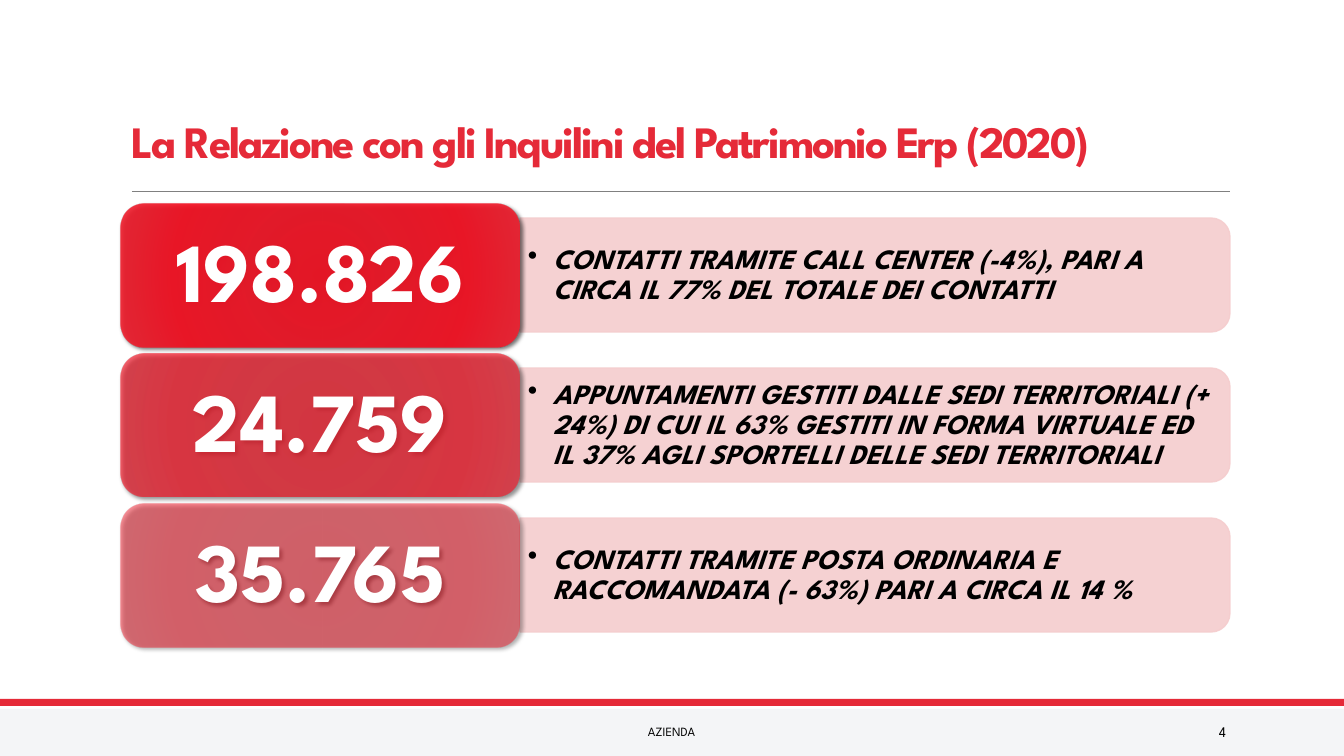
from dataclasses import dataclass
from typing import Any

from pptx import Presentation
from pptx import util as u
from pptx.dml.color import RGBColor
from pptx.enum import shapes, text
from pptx.oxml import parse_xml
from pptx.oxml.ns import nsdecls, qn

EMU_PER_PX = 914400 / 100.8
FONT = "League Spartan"
RED, PINK, GREY, FOOTER = "E52A38", "F5CDCE", "808080", "F4F5F7"
BLACK, WHITE = "000000", "FFFFFF"
CARD_STOPS = [(0, "F00D1E"), (34, "EE1222"), (70, "F60D1F"), (100, "EE2130")]

ROW_TOP, ROW_PITCH = 204, 150
CARD_LEFT, CARD_WIDTH, CARD_HEIGHT = 121, 399, 143
STRIP_WIDTH, STRIP_HEIGHT = 710, 114
NOTE_WIDTH, NOTE_HEIGHT, NOTE_INDENT = 704, 103, 25


@dataclass
class Box:
    left: int
    top: int
    width: int
    height: int


@dataclass
class Label:
    box: Box
    words: str
    size: float
    color: str = BLACK
    align: Any = text.PP_ALIGN.LEFT
    anchor: Any = text.MSO_ANCHOR.MIDDLE
    bold: bool = False
    italic: bool = False
    line_spacing: float = 1.0
    margins: tuple[int, int] = (10, 5)
    spacing: int = 0
    bullet: bool = False


@dataclass
class Row:
    figure: str
    note: str
    opacity: int


ROWS = [
    Row("198.826", "CONTATTI TRAMITE CALL CENTER (-4%), PARI A CIRCA IL 77% "
        "DEL TOTALE DEI CONTATTI", 90),
    Row("24.759", "APPUNTAMENTI GESTITI DALLE SEDI TERRITORIALI (+ 24%) DI CUI IL 63% "
        "GESTITI IN FORMA VIRTUALE ED IL 37% AGLI SPORTELLI DELLE SEDI TERRITORIALI", 70),
    Row("35.765", "CONTATTI TRAMITE POSTA ORDINARIA E RACCOMANDATA (- 63%) "
        "PARI A CIRCA IL 14 %", 50),
]


def px(value: int) -> u.Emu:
    return u.Emu(round(value * EMU_PER_PX))


def rgb(color: str) -> RGBColor:
    return RGBColor.from_string(color)


def place(box: Box) -> tuple:
    return px(box.left), px(box.top), px(box.width), px(box.height)


def apply(target: Any, values: dict[str, Any]) -> None:
    for name, value in values.items():
        setattr(target, name, value)


def set_opacity(fill: Any, percent: int) -> None:
    color = fill._xPr.find(qn("a:solidFill"))[0]
    color.append(parse_xml(f'<a:alpha {nsdecls("a")} val="{percent * 1000}"/>'))


def add_shape(slide: Any, kind: Any, box: Box, color: str) -> Any:
    shape = slide.shapes.add_shape(kind, *place(box))
    shape.shadow.inherit = False
    shape.fill.solid()
    shape.fill.fore_color.rgb = rgb(color)
    shape.line.fill.background()
    return shape


def write(shape: Any, label: Label) -> None:
    side, end = (px(margin) for margin in label.margins)
    frame = shape.text_frame
    apply(frame, {"word_wrap": True, "vertical_anchor": label.anchor,
                  "margin_left": side, "margin_right": side,
                  "margin_top": end, "margin_bottom": end})
    paragraph = frame.paragraphs[0]
    apply(paragraph, {"alignment": label.align, "line_spacing": label.line_spacing})
    if label.bullet:
        properties = paragraph._p.get_or_add_pPr()
        properties.set("marL", str(px(NOTE_INDENT)))
        properties.set("indent", str(-px(NOTE_INDENT)))
        properties.append(parse_xml(f'<a:buChar {nsdecls("a")} char="•"/>'))
    run = paragraph.add_run()
    run.text = label.words
    apply(run.font, {"name": FONT, "size": u.Pt(label.size),
                     "bold": label.bold, "italic": label.italic})
    run.font.color.rgb = rgb(label.color)
    if label.spacing:
        run._r.get_or_add_rPr().set("spc", str(label.spacing))


def add_label(slide: Any, label: Label) -> None:
    write(slide.shapes.add_textbox(*place(label.box)), label)


def add_strip(slide: Any, center_y: int) -> None:
    # Rounded top corners turn to the right-hand side
    center_x = CARD_LEFT + CARD_WIDTH + STRIP_WIDTH // 2
    box = Box(center_x - STRIP_HEIGHT // 2, center_y - STRIP_WIDTH // 2,
              STRIP_HEIGHT, STRIP_WIDTH)
    strip = add_shape(slide, shapes.MSO_SHAPE.ROUND_2_SAME_RECTANGLE, box, PINK)
    strip.rotation = 90
    strip.line.color.rgb = rgb(PINK)
    strip.line.width = u.Pt(1)
    for fill in (strip.fill, strip.line.fill):
        set_opacity(fill, 90)


def add_card(slide: Any, box: Box, row: Row) -> None:
    card = add_shape(slide, shapes.MSO_SHAPE.ROUNDED_RECTANGLE, box, RED)
    properties = card._element.spPr
    # Radial gradient
    stops = "".join(
        f'<a:gs pos="{position * 1000}"><a:srgbClr val="{color}">'
        f'<a:alpha val="{row.opacity * 1000}"/></a:srgbClr></a:gs>'
        for position, color in CARD_STOPS)
    gradient = parse_xml(
        f'<a:gradFill {nsdecls("a")} rotWithShape="1"><a:gsLst>{stops}</a:gsLst>'
        '<a:path path="circle"><a:fillToRect l="100000" t="100000" r="100000" b="100000"/>'
        '</a:path></a:gradFill>')
    properties.replace(properties.find(qn("a:solidFill")), gradient)
    # Soft shadow
    properties.find(qn("a:effectLst")).append(parse_xml(
        f'<a:outerShdw {nsdecls("a")} blurRad="{u.Pt(3)}" dist="{u.Pt(2)}" dir="2700000" '
        f'rotWithShape="0"><a:srgbClr val="{BLACK}"><a:alpha val="60000"/></a:srgbClr>'
        '</a:outerShdw>'))
    write(card, Label(box, row.figure, 60, WHITE, text.PP_ALIGN.CENTER, bold=True,
                      line_spacing=0.9, margins=(32, 19)))


def add_row(slide: Any, index: int, row: Row) -> None:
    card = Box(CARD_LEFT, ROW_TOP + index * ROW_PITCH, CARD_WIDTH, CARD_HEIGHT)
    center_y = card.top + card.height // 2
    add_strip(slide, center_y)
    note = Box(card.left + card.width, center_y - NOTE_HEIGHT // 2, NOTE_WIDTH, NOTE_HEIGHT)
    add_label(slide, Label(note, row.note, 20, bold=True, italic=True, line_spacing=0.9,
                           margins=(8, 4), bullet=True))
    add_card(slide, card, row)


def add_rule(slide: Any, left: int, right: int, y: int) -> None:
    rule = slide.shapes.add_connector(shapes.MSO_CONNECTOR.STRAIGHT,
                                      px(left), px(y), px(right), px(y))
    rule.line.color.rgb = rgb(GREY)
    rule.line.width = u.Pt(0.5)
    rule._element.spPr.append(parse_xml(f'<a:effectLst {nsdecls("a")}/>'))


def main() -> None:
    presentation = Presentation()
    apply(presentation, {"slide_width": px(1344), "slide_height": px(756)})
    slide = presentation.slides.add_slide(presentation.slide_layouts[6])

    # Footer bands and title rule
    add_shape(slide, shapes.MSO_SHAPE.RECTANGLE, Box(0, 709, 1344, 47), FOOTER)
    add_shape(slide, shapes.MSO_SHAPE.RECTANGLE, Box(0, 699, 1344, 7), RED)
    add_rule(slide, 132, 1230, 191)

    # Title, footer text and page number
    add_label(slide, Label(Box(122, 95, 1109, 78),
                           "La Relazione con gli Inquilini del Patrimonio Erp (2020)", 32, RED,
                           anchor=text.MSO_ANCHOR.BOTTOM, bold=True, line_spacing=0.85,
                           spacing=-150))
    add_label(slide, Label(Box(406, 712, 531, 40), "AZIENDA", 9, align=text.PP_ALIGN.CENTER))
    add_label(slide, Label(Box(1092, 712, 144, 40), "4", 10.5, align=text.PP_ALIGN.RIGHT))

    # Contact figures
    for index, row in enumerate(ROWS):
        add_row(slide, index, row)

    presentation.save("out.pptx")


if __name__ == "__main__":
    main()
